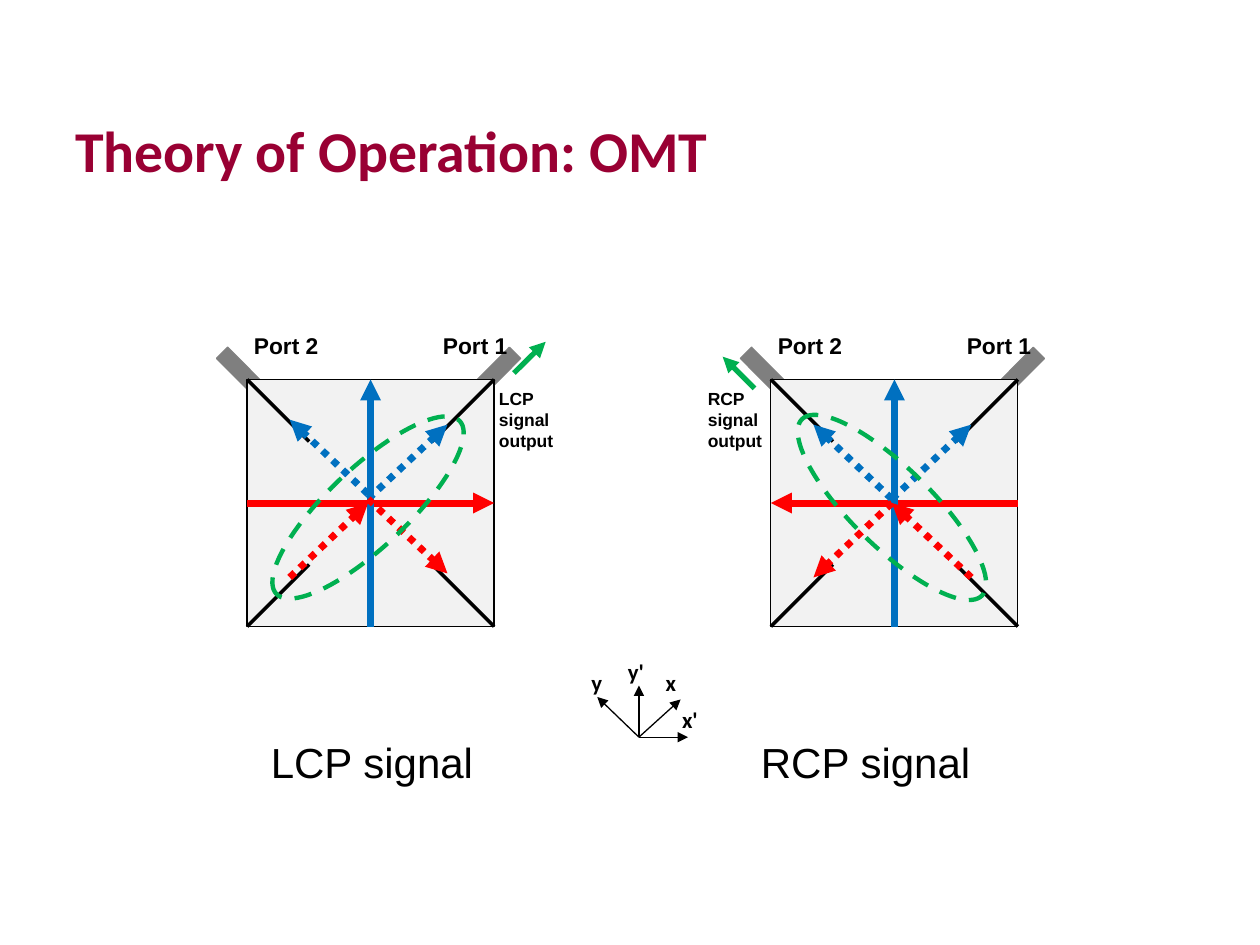
from lxml import etree
from pptx import Presentation
from pptx import util as u
from pptx.dml.color import RGBColor
from pptx.enum import dml, shapes, text
from pptx.oxml import ns

SQUARE = 4.98
TOP, LEFT, BOTTOM, RIGHT = range(4)
DOTTED = dml.MSO_LINE.ROUND_DOT  # written as sysDot
DASHED = dml.MSO_LINE.DASH


def color(hex_string):
    return RGBColor.from_string(hex_string)


class Sketch:
    """Draws on the slide, or in the open group, relative to an origin in cm."""
    maroon, black, red = "990033", "000000", "FF0000"
    blue, green = "0070C0", "00B050"
    gray, gray_edge, pale = "7F7F7F", "808080", "F2F2F2"

    def __init__(self, slide):
        self.slide = slide
        self.leave_group()

    def enter_group(self, left, top):
        self.shapes = self.slide.shapes.add_group_shape().shapes
        self.origin = left, top

    def leave_group(self):
        self.shapes = self.slide.shapes
        self.origin = 0, 0

    def place(self, x, y):
        return u.Cm(self.origin[0] + x), u.Cm(self.origin[1] + y)

    def shape(self, kind, box, fill, line, width, rotation=0, dash=None):
        x, y, w, h = box
        shape = self.shapes.add_shape(kind, *self.place(x, y), u.Cm(w), u.Cm(h))
        shape.shadow.inherit = False
        shape.rotation = rotation
        if fill:
            shape.fill.solid()
            shape.fill.fore_color.rgb = color(fill)
        else:
            shape.fill.background()
        shape.line.color.rgb = color(line)
        shape.line.width = u.Pt(width)
        if dash:
            shape.line.dash_style = dash
        return shape

    def label(self, words, box, size, font="Arial", bold=True, tint=black,
              wrap=True, inset=None, anchor=text.MSO_ANCHOR.TOP):
        x, y, w, h = box
        frame = self.shapes.add_textbox(*self.place(x, y), u.Cm(w), u.Cm(h)).text_frame
        frame.word_wrap = wrap
        frame.vertical_anchor = anchor
        if inset is not None:
            frame.margin_left = frame.margin_right = u.Cm(inset)
            frame.margin_top = frame.margin_bottom = u.Cm(inset / 2)
        frame.text = words
        style = frame.paragraphs[0].runs[0].font
        style.name, style.size, style.bold = font, u.Pt(size), bold
        style.color.rgb = color(tint)

    def line(self, start, end, tint, width, dash=None, arrow=True):
        connector = self.shapes.add_connector(
            shapes.MSO_CONNECTOR.STRAIGHT, *self.place(*start), *self.place(*end))
        connector.line.color.rgb = color(tint)
        connector.line.width = u.Pt(width)
        if dash:
            connector.line.dash_style = dash
        properties = connector._element.spPr
        if arrow:
            outline = properties.find(ns.qn("a:ln"))
            etree.SubElement(outline, ns.qn("a:tailEnd"), type="triangle")
        etree.SubElement(properties, ns.qn("a:effectLst"))
        return connector

    def joined_line(self, shape, start_side, end_side, tint, width):
        """Arrow between the middles of two sides of one rectangle."""
        connector = self.line((0, 0), (SQUARE, SQUARE), tint, width)
        connector.begin_connect(shape, start_side)
        connector.end_connect(shape, end_side)

    def transducer(self, left, red_sides, blue_left, red_dotted, tilt, output):
        """One OMT square with its ports, field vectors and output arrow."""
        self.enter_group(left, 7.65)
        rectangle = shapes.MSO_SHAPE.RECTANGLE
        for x, rotation in ((4.04, 314.8), (-0.74, 45.2)):
            self.shape(rectangle, (x, -0.13, 1.6, 0.32), self.gray,
                       self.gray_edge, 0.75, rotation)
        for words, x in (("Port 2", -0.1), ("Port 1", 3.71)):
            self.label(words, (x, -1.09, 1.9, 0.89), 13, inset=0.24)
        square = self.shape(rectangle, (0, 0, SQUARE, SQUARE),
                            self.pale, self.black, 0.75)
        near, far = (0, 1.25), (SQUARE, SQUARE - 1.25)
        for x, inner_x in (near, far):
            for y, inner_y in (near, far):
                self.line((x, y), (inner_x, inner_y), self.black, 2, arrow=False)
        self.joined_line(square, *red_sides, self.red, 4)
        self.joined_line(square, BOTTOM, TOP, self.blue, 4)
        for start, end in (blue_left, ((2.44, 2.41), (4.04, 0.91))):
            self.line(start, end, self.blue, 4, DOTTED)
        for start, end in red_dotted:
            self.line(start, end, self.red, 4, DOTTED)
        self.shape(shapes.MSO_SHAPE.OVAL, (-0.1, 1.78, 5.08, 1.6), None,
                   self.green, 2.5, tilt, DASHED)
        words, label_x, start, end = output
        self.line(start, end, self.green, 3)
        self.label(words, (label_x, 0.18, 1.27, 1.5), 10, inset=0)
        self.leave_group()

    def axes(self):
        self.enter_group(12.88, 14.86)
        for tip in ((-0.84, -0.81), (0.84, -0.76), (0, -1.04), (0.99, 0)):
            self.line((0, 0), tip, self.black, 0.75)
        for name, x, y in (("y", -1.2, -1.5), ("y'", -0.46, -1.73),
                           ("x", 0.3, -1.5), ("x'", 0.63, -0.76)):
            self.label(name, (x, y, 0.89, 0.89), 13, "Calibri", inset=0.24)
        self.leave_group()


def main():
    presentation = Presentation()
    presentation.slide_width, presentation.slide_height = u.Cm(25.4), u.Cm(19.05)
    sketch = Sketch(presentation.slides.add_slide(presentation.slide_layouts[6]))

    sketch.label("Theory of Operation: OMT", (1.27, 1.42, 22.86, 3.18), 33,
                 "Calibri", tint=sketch.maroon, anchor=text.MSO_ANCHOR.MIDDLE)
    sketch.transducer(
        4.98, (LEFT, RIGHT), ((2.44, 2.31), (0.86, 0.81)),
        (((0.86, 3.99), (2.44, 2.49)), ((2.44, 2.41), (4.04, 3.91))),
        316.7, ("LCP signal output", 5.08, (5.38, -0.13), (6.02, -0.76)))
    sketch.transducer(
        15.54, (RIGHT, LEFT), ((2.44, 2.41), (0.86, 0.91)),
        (((4.04, 3.99), (2.44, 2.49)), ((2.44, 2.49), (0.86, 3.99))),
        44.4, ("RCP signal output", -1.27, (-0.33, 0.18), (-0.97, -0.46)))
    for words, x, width in (("LCP signal", 5.21, 4.88), ("RCP signal", 15.09, 4.78)):
        sketch.label(words, (x, 14.73, width, 1.3), 24, bold=False, wrap=False)
    sketch.axes()

    presentation.save("out.pptx")


if __name__ == "__main__":
    main()
